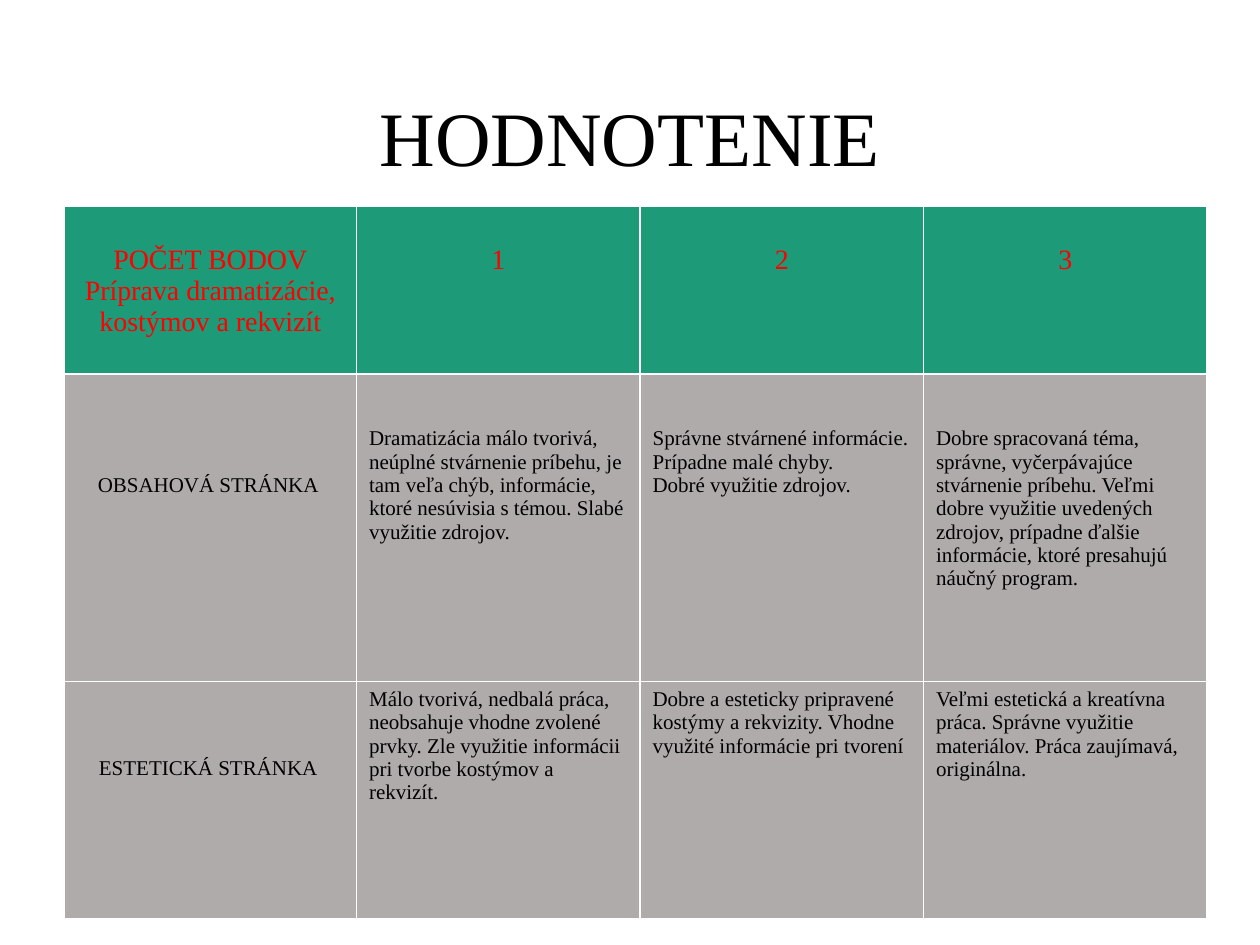
from lxml import etree
from pptx import Presentation
from pptx import util as u
from pptx.dml.color import RGBColor
from pptx.enum import text
from pptx.oxml import ns

BLACK = RGBColor(0x00, 0x00, 0x00)
WHITE = RGBColor(0xFF, 0xFF, 0xFF)
RED = RGBColor(0xFF, 0x00, 0x00)
GREEN = RGBColor(0x1D, 0x9A, 0x78)
GRAY = RGBColor(0xAF, 0xAB, 0xAB)

CENTER, LEFT = text.PP_ALIGN.CENTER, text.PP_ALIGN.LEFT
COLUMN_WIDTHS = [2.32, 2.25, 2.25, 2.25]
ROW_HEIGHTS = [1.33, 2.44, 1.88]

# Each row: lines of every cell
ROWS = [
    [["POČET BODOV", "Príprava dramatizácie,", "kostýmov a rekvizít"], ["1"], ["2"], ["3"]],
    [["OBSAHOVÁ STRÁNKA "],
     ["Dramatizácia málo tvorivá, neúplné stvárnenie príbehu, je tam veľa chýb, informácie, "
      "ktoré nesúvisia s témou. Slabé využitie zdrojov."],
     ["Správne stvárnené informácie. Prípadne malé chyby.", "Dobré využitie zdrojov."],
     ["Dobre spracovaná téma, správne, vyčerpávajúce stvárnenie príbehu. Veľmi dobre využitie "
      "uvedených zdrojov, prípadne ďalšie informácie, ktoré presahujú náučný program."]],
    [["ESTETICKÁ STRÁNKA "],
     ["Málo tvorivá, nedbalá práca, neobsahuje vhodne zvolené prvky. Zle využitie informácii "
      "pri tvorbe kostýmov a rekvizít."],
     ["Dobre a esteticky pripravené kostýmy a rekvizity. Vhodne využité informácie pri tvorení"],
     ["Veľmi estetická a kreatívna práca. Správne využitie materiálov. Práca zaujímavá, "
      "originálna."]],
]
# Top margins of each row: label cell, then the other cells
TOP_MARGINS = [(0.3, 0.3), (0.79, 0.42), (0.6, 0.05)]


def write(frame, lines, size=12, color=BLACK, align=LEFT, spacing=None, font="Times New Roman"):
    """Fill a text frame with one paragraph per line."""
    for index, line in enumerate(lines):
        para = frame.paragraphs[0] if index == 0 else frame.add_paragraph()
        para.alignment = align
        para.line_spacing = spacing
        span = para.add_run()
        span.text = line
        span.font.name = font
        span.font.size = u.Pt(size)
        span.font.bold = False
        span.font.color.rgb = color


class Page:
    def __init__(self, deck):
        self.slide = deck.slides.add_slide(deck.slide_layouts[5])
        self.border_color, self.border_width = WHITE, u.Pt(1)

    def title(self, words, left, top, width, height):
        box = self.slide.shapes.title
        box.left, box.top, box.width, box.height = map(u.Inches, (left, top, width, height))
        frame = box.text_frame
        frame.auto_size = text.MSO_AUTO_SIZE.NONE
        frame.vertical_anchor = text.MSO_ANCHOR.MIDDLE
        write(frame, [words], size=44, align=CENTER, spacing=0.9)

    def borders(self, cell):
        properties = cell._tc.get_or_add_tcPr()
        for side in ("lnL", "lnR", "lnT", "lnB"):
            line = etree.SubElement(properties, ns.qn(f"a:{side}"), w=str(self.border_width))
            fill = etree.SubElement(line, ns.qn("a:solidFill"))
            etree.SubElement(fill, ns.qn("a:srgbClr"), val=str(self.border_color))

    def table(self, left, top):
        frame = self.slide.shapes.add_table(
            len(ROW_HEIGHTS), len(COLUMN_WIDTHS), u.Inches(left), u.Inches(top),
            u.Inches(sum(COLUMN_WIDTHS)), u.Inches(sum(ROW_HEIGHTS)))
        grid = frame.table
        grid.horz_banding = False
        for column, width in zip(grid.columns, COLUMN_WIDTHS):
            column.width = u.Inches(width)
        for r, cells in enumerate(ROWS):
            grid.rows[r].height = u.Inches(ROW_HEIGHTS[r])
            header = r == 0
            for c, lines in enumerate(cells):
                cell = grid.cell(r, c)
                self.borders(cell)
                cell.fill.solid()
                cell.fill.fore_color.rgb = GREEN if header else GRAY
                cell.margin_top = u.Inches(TOP_MARGINS[r][min(c, 1)])
                write(cell.text_frame, lines, size=16 if header else 12,
                      color=RED if header else BLACK,
                      align=CENTER if header or c == 0 else LEFT)


def main():
    deck = Presentation()
    deck.slide_width, deck.slide_height = u.Inches(10), u.Inches(7.5)
    page = Page(deck)
    # Heading
    page.title("HODNOTENIE", 0.69, 0.4, 8.62, 1.45)
    # Grading table
    page.table(0.51, 1.64)
    deck.save("out.pptx")


if __name__ == "__main__":
    main()
